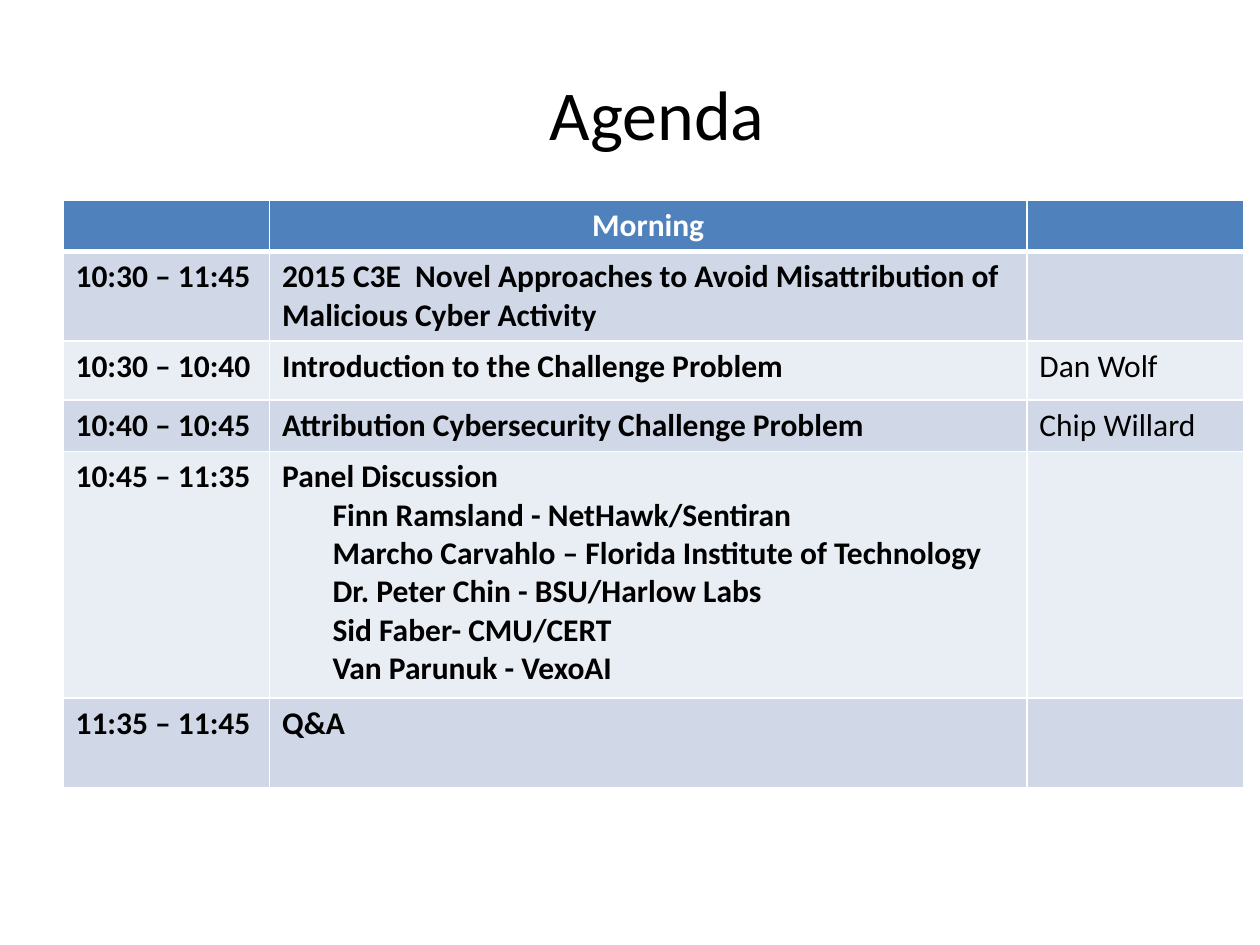
from lxml import etree
from pptx import Presentation
from pptx.dml.color import RGBColor
from pptx.enum.text import MSO_ANCHOR, PP_ALIGN
from pptx.oxml.ns import qn
from pptx.util import Inches, Pt

CENTER, LEFT = PP_ALIGN.CENTER, PP_ALIGN.LEFT
MIDDLE = MSO_ANCHOR.MIDDLE

BLACK = RGBColor(0x00, 0x00, 0x00)
WHITE = RGBColor(0xFF, 0xFF, 0xFF)
HEADER_BLUE = RGBColor(0x4F, 0x81, 0xBD)
BANDS = [RGBColor(0xD0, 0xD8, 0xE8), RGBColor(0xE9, 0xED, 0xF4)]
FONT = "Calibri"

PANEL = [
    "Panel Discussion",
    "Finn Ramsland - NetHawk/Sentiran",
    "Marcho Carvahlo – Florida Institute of Technology",
    "Dr. Peter Chin - BSU/Harlow Labs",
    "Sid Faber- CMU/CERT",
    "Van Parunuk - VexoAI",
]
# Row height, time, topic lines (those after the first are indented), speaker
AGENDA = [
    (0.4, "", ["Morning"], ""),
    (0.71, "10:30 – 11:45",
     ["2015 C3E  Novel Approaches to Avoid Misattribution of Malicious Cyber Activity"], ""),
    (0.47, "10:30 – 10:40", ["Introduction to the Challenge Problem"], "Dan Wolf"),
    (0.4, "10:40 – 10:45", ["Attribution Cybersecurity Challenge Problem"], "Chip Willard"),
    (1.96, "10:45 – 11:35", PANEL, ""),
    (0.71, "11:35 – 11:45", ["Q&A"], ""),
]
COLUMN_WIDTHS = [1.64, 6.01, 1.72]


def set_font(paragraph, size, color, bold=False):
    font = paragraph.font
    font.name, font.size, font.bold = FONT, Pt(size), bold
    font.color.rgb = color


def add_borders(cell, bottom_width):
    properties = cell._tc.get_or_add_tcPr()
    for side, width in (("lnL", 1), ("lnR", 1), ("lnT", 1), ("lnB", bottom_width)):
        line = etree.SubElement(properties, qn(f"a:{side}"), w=str(Pt(width)))
        fill = etree.SubElement(line, qn("a:solidFill"))
        etree.SubElement(fill, qn("a:srgbClr"), val=str(WHITE))


def fill_cell(cell, lines, fill, color, bold, align, bottom_width):
    add_borders(cell, bottom_width)
    cell.fill.solid()
    cell.fill.fore_color.rgb = fill
    cell.text = "\n".join(lines)
    for i, paragraph in enumerate(cell.text_frame.paragraphs):
        paragraph.alignment = align
        if i:
            paragraph._p.get_or_add_pPr().set("marL", str(Inches(0.4)))
        set_font(paragraph, 18, color, bold)


def add_title(slide):
    title = slide.shapes.title
    title.left, title.top = Inches(1.44), Inches(0.27)
    title.width, title.height = Inches(7.55), Inches(1.25)
    title.text_frame.text = "Agenda"
    title.text_frame.vertical_anchor = MIDDLE
    heading = title.text_frame.paragraphs[0]
    heading.alignment = CENTER
    set_font(heading, 40, BLACK)


def add_agenda(slide):
    agenda = slide.shapes.add_table(
        len(AGENDA), len(COLUMN_WIDTHS), Inches(0.5), Inches(1.59),
        Inches(sum(COLUMN_WIDTHS)), Inches(sum(row[0] for row in AGENDA))).table
    for column, width in zip(agenda.columns, COLUMN_WIDTHS):
        column.width = Inches(width)
    for r, (height, time, topic, speaker) in enumerate(AGENDA):
        agenda.rows[r].height = Inches(height)
        header = r == 0
        fill = HEADER_BLUE if header else BANDS[(r - 1) % 2]
        for c, lines in enumerate(([time], topic, [speaker])):
            fill_cell(agenda.cell(r, c), lines, fill,
                      color=WHITE if header else BLACK,
                      bold=header or c < 2,
                      align=CENTER if header else LEFT,
                      bottom_width=3 if header else 1)


def main():
    prs = Presentation()
    prs.slide_width, prs.slide_height = Inches(10), Inches(7.5)
    slide = prs.slides.add_slide(prs.slide_layouts[5])  # title only
    add_title(slide)
    add_agenda(slide)
    prs.save("out.pptx")


if __name__ == "__main__":
    main()
